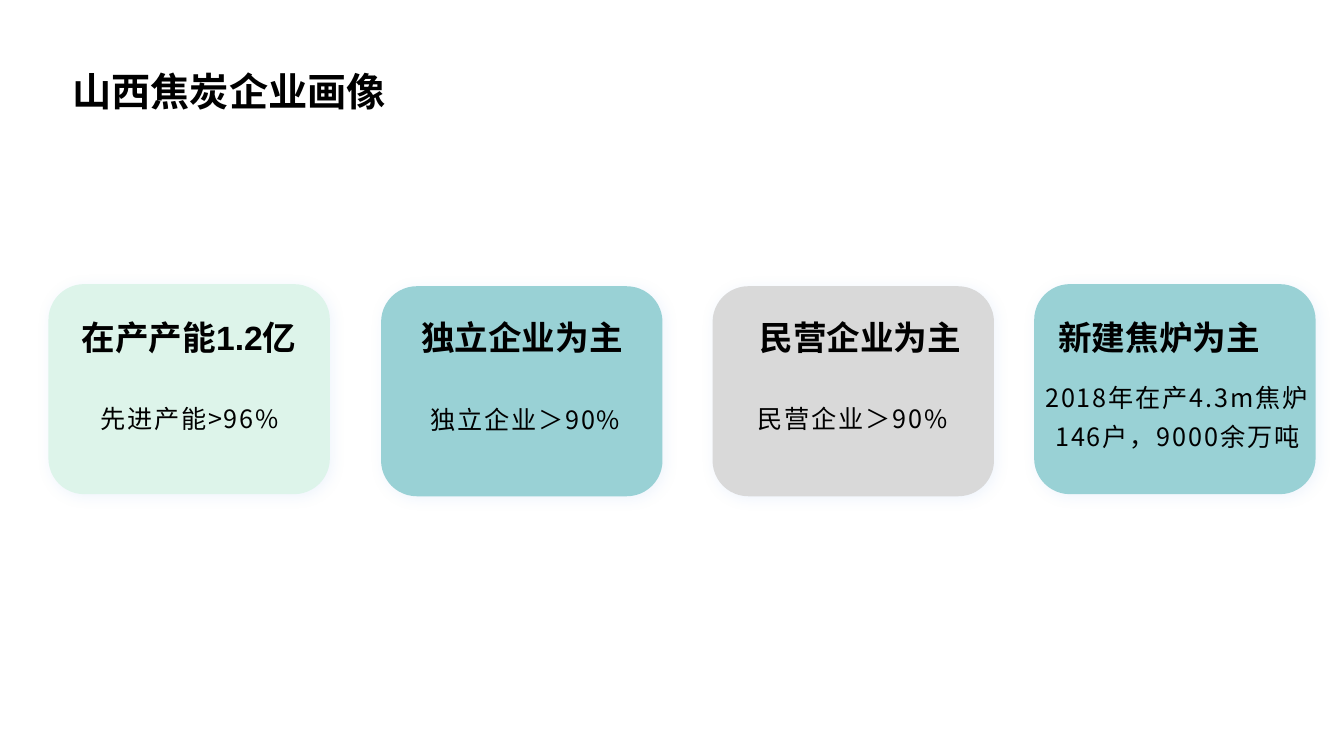
from lxml import etree
from pptx import Presentation
from pptx.dml.color import RGBColor
from pptx.enum.shapes import MSO_SHAPE as Preset
from pptx.enum.text import MSO_ANCHOR as Anchor, PP_ALIGN as Align
from pptx.oxml.ns import qn
from pptx.util import Pt

# Content
HEADLINE = "山西焦炭企业画像"
SANS, CJK = "Arial", "Noto Sans CJK SC"
BLACK, SHADOW = "000000", "6096E6"

# Card: left, top, fill; heading and detail: text, left, top
CARDS = [
    dict(card=(34.6, 203, "DDF4EA"), heading=("在产产能1.2亿", 34.6, 197.3),
         detail=("先进产能>96%", 40.3, 281.5)),
    dict(card=(272.2, 204.5, "99D1D5"), heading=("独立企业为主", 272.2, 197.3),
         detail=("独立企业＞90%", 280.1, 282.3)),
    dict(card=(509, 204.5, "D9D9D9"), heading=("民营企业为主", 514, 197.3),
         detail=("民营企业＞90%", 514, 281.5)),
    dict(card=(738.7, 203, "99D1D5"), heading=("新建焦炉为主", 756, 211.7),
         detail=("2018年在产4.3m焦炉146户，9000余万吨", 746, 266.4)),
]
CARD_W, CARD_H = 201, 150
HEADING_BOTTOM = 254.9
DETAIL_W, DETAIL_H = 190, 57.6


def color(hex_code):
    return RGBColor.from_string(hex_code)


def add_text(text, left, top, width, height, size, font=SANS, bold=False,
             align=Align.CENTER, anchor=Anchor.TOP, leading=1.0, tracking=0):
    box = slide.shapes.add_textbox(Pt(left), Pt(top), Pt(width), Pt(height))
    frame = box.text_frame
    frame.word_wrap = True
    frame.vertical_anchor = anchor
    frame.margin_left = frame.margin_right = 0
    frame.margin_top = frame.margin_bottom = 0
    line = frame.paragraphs[0]
    line.text = text
    line.alignment, line.line_spacing = align, leading
    run = line.runs[0]
    run.font.name, run.font.size, run.font.bold = font, Pt(size), bold
    run.font.color.rgb = color(BLACK)
    props = run.font._element
    if tracking:
        props.set("spc", str(round(tracking * 100)))
    east_asian = etree.Element(qn("a:ea"), typeface=CJK)
    props.find(qn("a:latin")).addnext(east_asian)


def add_soft_shadow(shape):
    shape.shadow.inherit = False
    effects = shape._element.spPr.find(qn("a:effectLst"))
    outer = etree.SubElement(effects, qn("a:outerShdw"), blurRad=str(Pt(10)),
                             dist=str(Pt(2)), dir=str(45 * 60000), algn="tl", rotWithShape="0")
    tint = etree.SubElement(outer, qn("a:srgbClr"), val=SHADOW)
    etree.SubElement(tint, qn("a:alpha"), val="10000")


def add_card(left, top, fill):
    card = slide.shapes.add_shape(Preset.ROUNDED_RECTANGLE, Pt(left), Pt(top),
                                  Pt(CARD_W), Pt(CARD_H))
    card.adjustments[0] = 0.17
    card.fill.solid()
    card.fill.fore_color.rgb = color(fill)
    card.line.fill.background()
    add_soft_shadow(card)


# Slide
deck = Presentation()
deck.slide_width, deck.slide_height = Pt(960), Pt(540)
slide = deck.slides.add_slide(deck.slide_layouts[6])

# Headline
add_text(HEADLINE, 51.8, 48.2, 590, 34, 28, bold=True, align=Align.LEFT)

# Cards with heading and detail; the last heading is left-aligned
for item in CARDS:
    add_card(*item["card"])
    heading, left, top = item["heading"]
    last = item is CARDS[-1]
    add_text(heading, left, top, CARD_W, HEADING_BOTTOM - top, 24, bold=True,
             font=CJK if last else SANS, align=Align.LEFT if last else Align.CENTER,
             anchor=Anchor.BOTTOM, leading=1.5 if last else 1.0)
    add_text(*item["detail"], DETAIL_W, DETAIL_H, 18, font=CJK,
             leading=1.3, tracking=1.3)

deck.save("out.pptx")
